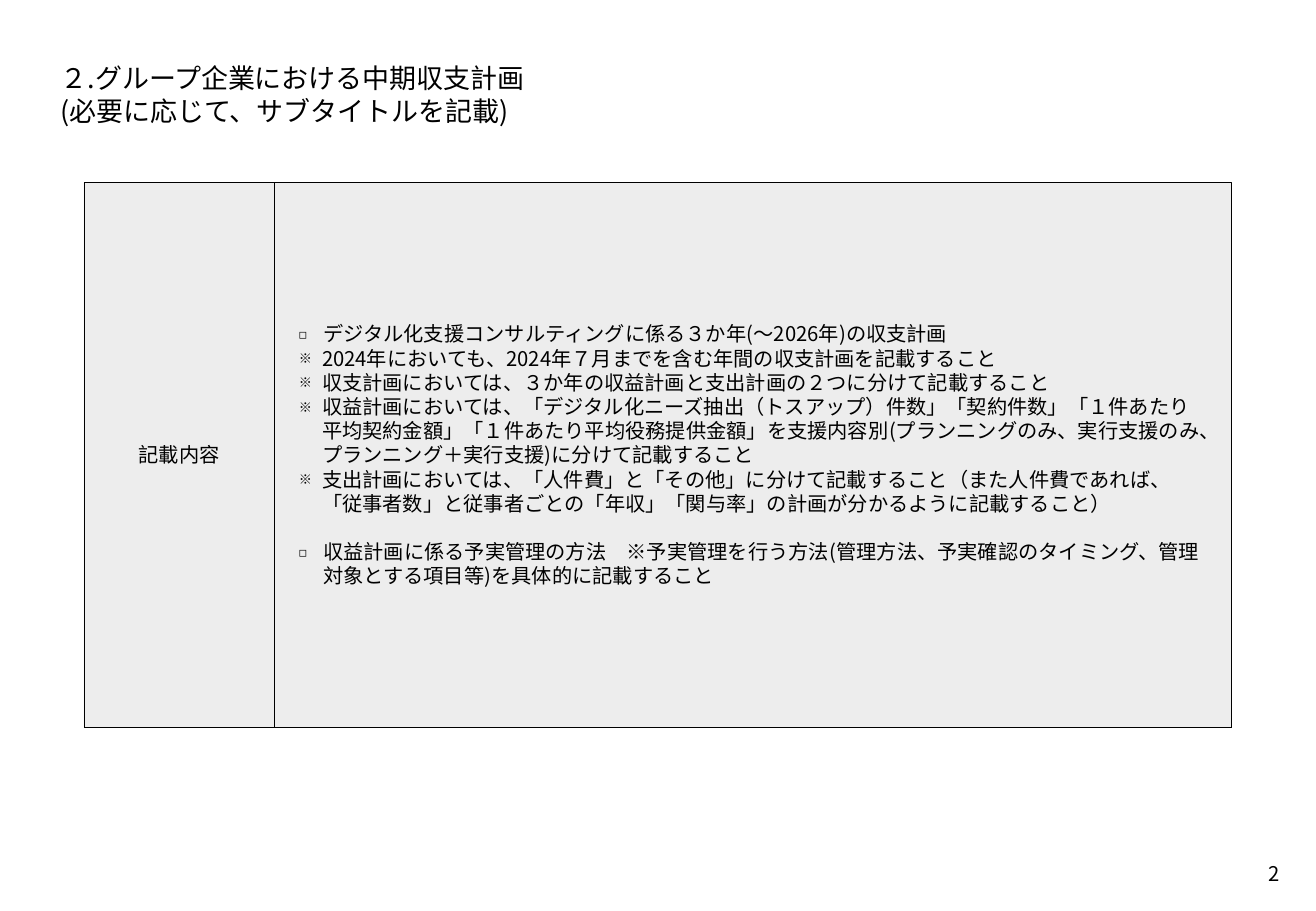
from dataclasses import dataclass

from lxml import etree
from pptx import Presentation
from pptx import util as u
from pptx.dml.color import RGBColor
from pptx.enum import dml, shapes, text
from pptx.oxml.ns import qn


@dataclass(frozen=True)
class Theme:
    font: str = "Noto Sans CJK JP"
    ink: str = "000000"
    panel: str = "EDEDED"
    title_size: float = 16
    body_size: float = 12
    title_leading: float = 19.5
    body_leading: float = 14.35
    bullet_scale: str = "65000"
    outline: float = 0.25


class SlideBuilder:
    def __init__(self, slide, theme):
        self.slide = slide
        self.theme = theme

    def place(self, sp, box):
        sp.left, sp.top, sp.width, sp.height = [u.Inches(v) for v in box]

    def frame(self, sp, inset, anchor):
        tf = sp.text_frame
        tf.word_wrap = True
        tf.auto_size = text.MSO_AUTO_SIZE.NONE
        tf.vertical_anchor = anchor
        tf.margin_left = tf.margin_right = u.Inches(inset)
        tf.margin_top = tf.margin_bottom = u.Inches(inset)
        return tf

    def format(self, p, size, leading, align=text.PP_ALIGN.LEFT):
        p.alignment = align
        p.line_spacing = u.Pt(leading)
        p.space_before = p.space_after = u.Pt(0)
        for r in p.runs:
            r.font.size = u.Pt(size)
            r.font.name = self.theme.font
            r.font.color.rgb = RGBColor.from_string(self.theme.ink)
            ea = etree.SubElement(r.font._element, qn("a:ea"))
            ea.set("typeface", self.theme.font)

    def bullet(self, p, mark, indent):
        pPr = p._p.get_or_add_pPr()
        pPr.set("marL", str(u.Inches(indent)))
        pPr.set("indent", str(-u.Inches(indent)))
        for tag, key, value in (
            ("a:buSzPct", "val", self.theme.bullet_scale),
            ("a:buFont", "typeface", self.theme.font),
            ("a:buChar", "char", mark),
        ):
            etree.SubElement(pPr, qn(tag)).set(key, value)

    def panel(self, sp):
        sp.fill.solid()
        sp.fill.fore_color.rgb = RGBColor.from_string(self.theme.panel)
        sp.line.color.rgb = RGBColor.from_string(self.theme.ink)
        sp.line.width = u.Pt(self.theme.outline)
        sp.line.dash_style = dml.MSO_LINE.ROUND_DOT

    def title(self, box, words):
        sp = self.slide.shapes.title
        self.place(sp, box)
        p = self.frame(sp, 0.2, text.MSO_ANCHOR.TOP).paragraphs[0]
        p.text = words
        self.format(p, self.theme.title_size, self.theme.title_leading)

    def items(self, box, entries):
        sp = self.slide.placeholders[1]
        self.place(sp, box)
        self.panel(sp)
        tf = self.frame(sp, 0.2, text.MSO_ANCHOR.MIDDLE)
        tf.text = "\n".join(words for _, words, _ in entries)
        for p, (mark, _, gap) in zip(tf.paragraphs, entries):
            self.format(p, self.theme.body_size, self.theme.body_leading)
            p.space_before = u.Pt(gap)
            self.bullet(p, mark, 0.2 if mark == "◻" else 0.19)

    def label(self, box, words):
        sp = self.slide.shapes.add_shape(
            shapes.MSO_SHAPE.RECTANGLE, *[u.Inches(v) for v in box])
        sp.shadow.inherit = False
        self.panel(sp)
        p = self.frame(sp, 0.1, text.MSO_ANCHOR.MIDDLE).paragraphs[0]
        p.text = words
        self.format(p, self.theme.body_size, self.theme.body_leading,
                    text.PP_ALIGN.CENTER)

    def page_number(self, box, number):
        sp = self.slide.shapes.add_textbox(*[u.Inches(v) for v in box])
        p = self.frame(sp, 0.1, text.MSO_ANCHOR.TOP).paragraphs[0]
        p.text = number
        self.format(p, self.theme.body_size, self.theme.body_leading,
                    text.PP_ALIGN.RIGHT)


def main():
    prs = Presentation()
    prs.slide_width, prs.slide_height = u.Inches(10.83), u.Inches(7.5)
    theme = Theme()
    s = SlideBuilder(prs.slides.add_slide(prs.slide_layouts[1]), theme)

    # Heading
    s.title((0.3, 0.3, 10.24, 0.79),
            "２.グループ企業における中期収支計画\v(必要に応じて、サブタイトルを記載)")

    # Contents panel: mark, wording, space before
    left, top, label_width, width, height = 0.69, 1.5, 1.57, 7.87, 4.49
    s.items((left + label_width, top, width, height), [
        ("◻", "デジタル化支援コンサルティングに係る３か年(～2026年)の収支計画", 0),
        ("※", "2024年においても、2024年７月までを含む年間の収支計画を記載すること", 0),
        ("※", "収支計画においては、３か年の収益計画と支出計画の２つに分けて記載すること", 0),
        ("※", "収益計画においては、「デジタル化ニーズ抽出（トスアップ）件数」「契約件数」"
              "「１件あたり平均契約金額」「１件あたり平均役務提供金額」を支援内容別"
              "(プランニングのみ、実行支援のみ、プランニング＋実行支援)に分けて記載すること", 0),
        ("※", "支出計画においては、「人件費」と「その他」に分けて記載すること"
              "（また人件費であれば、「従事者数」と従事者ごとの「年収」「関与率」の"
              "計画が分かるように記載すること）", 0),
        ("◻", "収益計画に係る予実管理の方法　※予実管理を行う方法"
              "(管理方法、予実確認のタイミング、管理対象とする項目等)を"
              "具体的に記載すること", theme.body_leading),
    ])
    s.label((left, top, label_width, height), "記載内容")

    # Page number
    s.page_number((10.24, 6.99, 0.39, 0.39), "2")

    prs.save("out.pptx")


if __name__ == "__main__":
    main()
